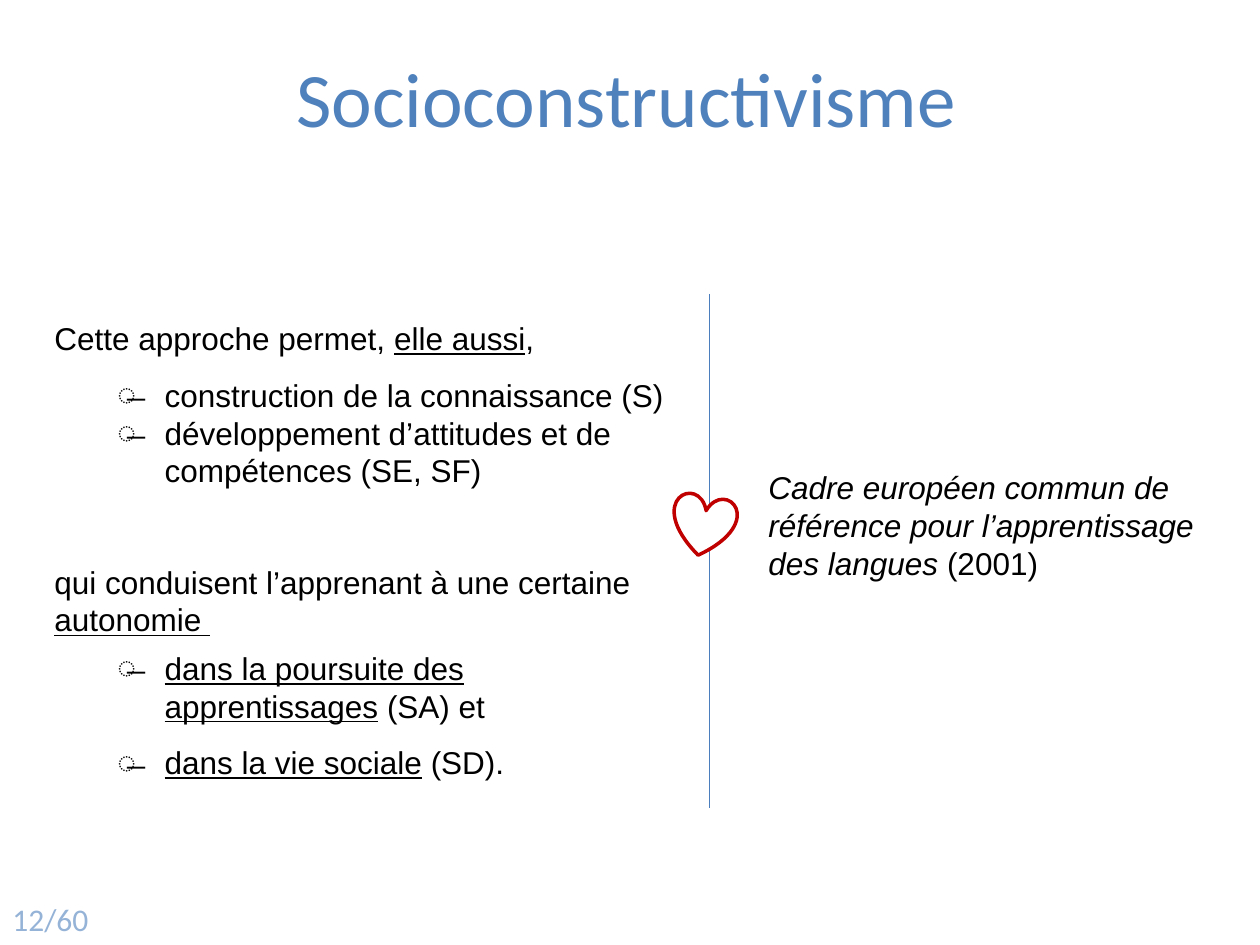
from lxml import etree
from pptx import Presentation
from pptx.dml.color import RGBColor
from pptx.enum.shapes import MSO_CONNECTOR, MSO_SHAPE
from pptx.enum.text import MSO_ANCHOR, MSO_AUTO_SIZE, PP_ALIGN
from pptx.oxml.ns import qn
from pptx.util import Pt

BLACK = RGBColor(0x00, 0x00, 0x00)
WHITE = RGBColor(0xFF, 0xFF, 0xFF)
BLUE = RGBColor(0x4F, 0x81, 0xBD)
DIVIDER_BLUE = RGBColor(0x4B, 0x7E, 0xBC)
PALE_BLUE = RGBColor(0x95, 0xB3, 0xD7)
RED = RGBColor(0xC0, 0x00, 0x00)
STRAIGHT = MSO_CONNECTOR.STRAIGHT
HEART = MSO_SHAPE.HEART
TOP, MIDDLE = MSO_ANCHOR.TOP, MSO_ANCHOR.MIDDLE
LEFT, CENTER = PP_ALIGN.LEFT, PP_ALIGN.CENTER
FIT_SHAPE, NO_FIT = MSO_AUTO_SIZE.SHAPE_TO_FIT_TEXT, MSO_AUTO_SIZE.NONE
UNDERLINE, ITALIC = "underline", "italic"


class SlideWriter:
    body_font = "Arial"
    heading_font = "Calibri"
    body_size = 18
    bullet = "̶"
    bullet_margin = 63
    bullet_hang = 27

    def __init__(self, slide):
        self.slide = slide

    def text(self, box, paragraphs, font=body_font, size=body_size, color=BLACK,
             align=LEFT, anchor=TOP, wrap=True, fit=FIT_SHAPE):
        frame = self.slide.shapes.add_textbox(*map(Pt, box)).text_frame
        frame.word_wrap = wrap
        frame.auto_size = fit
        frame.vertical_anchor = anchor
        for index, (parts, options) in enumerate(paragraphs):
            paragraph = frame.add_paragraph() if index else frame.paragraphs[0]
            self.paragraph(paragraph, align, **options)
            for words, emphasis in parts:
                run = paragraph.add_run()
                run.text = words
                run.font.name = font
                run.font.size = Pt(size)
                run.font.color.rgb = color
                if emphasis:
                    setattr(run.font, emphasis, True)

    def paragraph(self, paragraph, align, bulleted=False, spacing=1.0, before=0):
        if bulleted:
            properties = paragraph._p.get_or_add_pPr()
            properties.set("marL", str(Pt(self.bullet_margin)))
            properties.set("indent", str(-Pt(self.bullet_hang)))
            etree.SubElement(properties, qn("a:buFont")).set("typeface", self.body_font)
            etree.SubElement(properties, qn("a:buChar")).set("char", self.bullet)
            paragraph.level = 1
        paragraph.alignment = align
        paragraph.line_spacing = spacing
        paragraph.space_before = Pt(before)

    def line(self, start, end, color, width):
        connector = self.slide.shapes.add_connector(STRAIGHT, *map(Pt, start + end))
        connector.line.color.rgb = color
        connector.line.width = Pt(width)
        etree.SubElement(connector._element.spPr, qn("a:effectLst"))

    def shape(self, kind, box, fill, outline, width, rotation=0):
        shape = self.slide.shapes.add_shape(kind, *map(Pt, box))
        shape.shadow.inherit = False
        shape.rotation = rotation
        shape.fill.solid()
        shape.fill.fore_color.rgb = fill
        shape.line.color.rgb = outline
        shape.line.width = Pt(width)


def main():
    presentation = Presentation()
    presentation.slide_width, presentation.slide_height = Pt(720), Pt(540)
    writer = SlideWriter(presentation.slides.add_slide(presentation.slide_layouts[6]))

    approach = [
        ([("Cette approche permet, ", None), ("elle aussi", UNDERLINE), (",", None)],
         {"spacing": 1.5}),
        ([("construction de la connaissance (S)", None)],
         {"bulleted": True, "spacing": 1.5}),
        ([("développement d’attitudes et de compétences (SE, SF)", None)],
         {"bulleted": True}),
    ]
    framework = [
        ([("Cadre européen commun de référence pour l’apprentissage des langues ", ITALIC),
          ("(2001)", None)], {}),
    ]
    autonomy = [
        ([("qui conduisent l’apprenant à une certaine ", None), ("autonomie ", UNDERLINE)], {}),
        ([("dans la poursuite des apprentissages", UNDERLINE), (" (SA) et", None)],
         {"bulleted": True, "before": 6}),
        ([("dans la vie sociale", UNDERLINE), (" (SD).", None)],
         {"bulleted": True, "spacing": 1.5}),
    ]

    writer.text((24, 168, 366, 116.6), approach)
    writer.text((34, 0, 648, 110), [([("Socioconstructivisme", None)], {})],
                font=writer.heading_font, size=44, color=BLUE,
                align=CENTER, anchor=MIDDLE, fit=NO_FIT)
    writer.text((432, 264, 261.5, 72.7), framework)
    writer.text((24, 318, 357, 133), autonomy)
    writer.line((405.4, 168), (405.4, 462), DIVIDER_BLUE, 0.75)
    writer.shape(HEART, (384, 283, 36, 34.5), WHITE, RED, 2, rotation=10.2)
    writer.text((0, 510.5, 58.3, 29), [([("12/60", None)], {})],
                font=writer.heading_font, color=PALE_BLUE, wrap=False)

    presentation.save("out.pptx")


if __name__ == "__main__":
    main()
